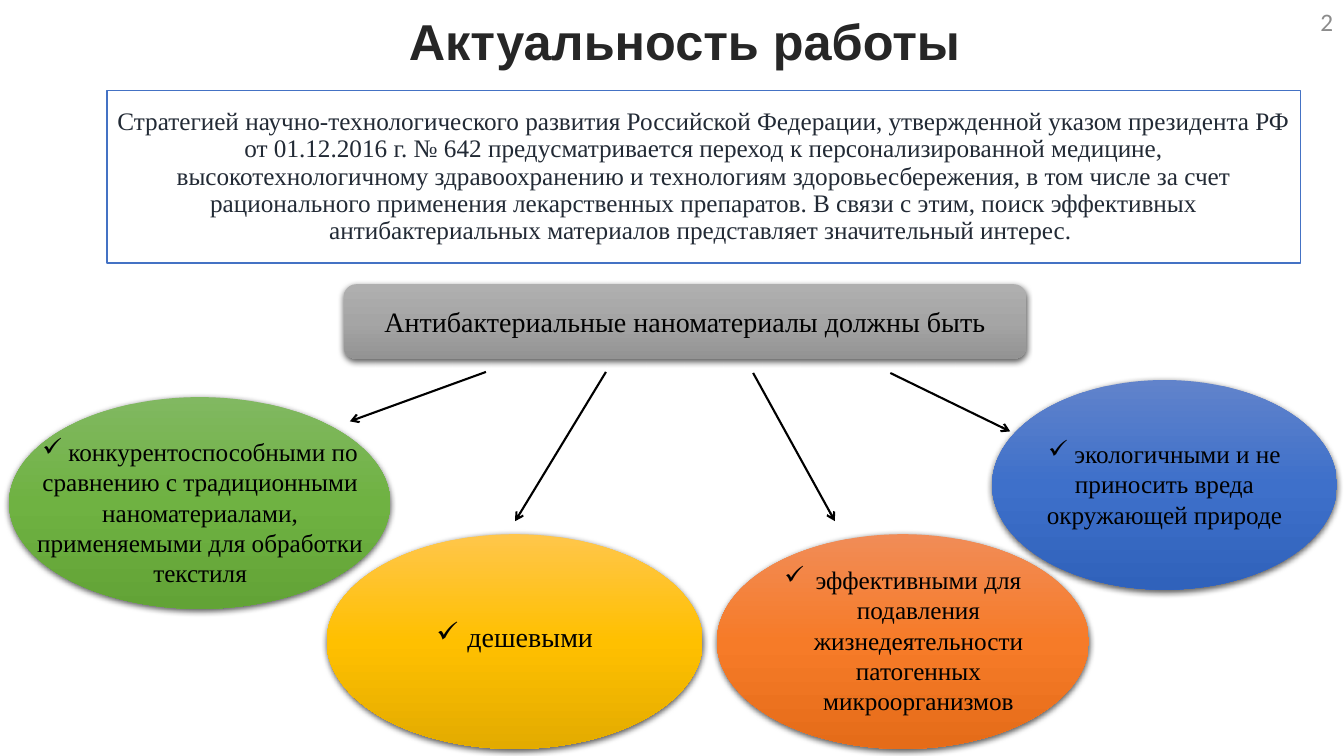
from copy import deepcopy
from dataclasses import dataclass

from lxml.etree import SubElement
from pptx import Presentation
from pptx.dml.color import RGBColor
from pptx.enum.shapes import MSO_CONNECTOR as Connector, MSO_SHAPE as Shape
from pptx.enum.text import MSO_ANCHOR as Anchor, MSO_AUTO_SIZE as AutoSize, PP_ALIGN as Align
from pptx.oxml.ns import qn
from pptx.util import Inches, Pt


@dataclass(frozen=True)
class Theme:
    heading_font: str = "Arial"
    number_font: str = "Calibri"
    body_font: str = "Times New Roman"
    heading_size: int = 36
    lead_size: int = 20
    body_size: int = 18
    heading: str = "262626"
    number: str = "8C8C8C"
    strategy: str = "222A35"
    ink: str = "000000"
    paper: str = "FFFFFF"
    frame: str = "4472C4"
    gray: tuple = ("AFAFAF", "A5A5A5", "939393")
    yellow: tuple = ("FFC64B", "FFC000", "E3AB00")
    green: tuple = ("81B861", "6FB242", "62A336")
    orange: tuple = ("F18C57", "F67B28", "E56C19")
    blue: tuple = ("6183CB", "3E70CA", "3062BB")


theme = Theme()

TITLE = "Актуальность работы"
PAGE = "2"
STRATEGY = (
    "Стратегией научно-технологического развития Российской Федерации, утвержденной "
    "указом президента РФ от 01.12.2016 г. № 642 предусматривается переход к "
    "персонализированной медицине, высокотехнологичному здравоохранению и технологиям "
    "здоровьесбережения, в том числе за счет рационального применения лекарственных "
    "препаратов. В связи с этим, поиск эффективных антибактериальных материалов "
    "представляет значительный интерес. "
)
LEAD = "Антибактериальные наноматериалы должны быть"

REQUIREMENTS = [
    dict(text="дешевыми", colors=theme.yellow, size=theme.lead_size, hanging=0.31,
         oval=(3.24, 5.3, 3.73, 2.13), label=(3.99, 6.1, 2.23, 0.44),
         arrow=(6.01, 3.69, 5.11, 5.17)),
    dict(text=" конкурентоспособными по сравнению с традиционными наноматериалами, "
              "применяемыми для обработки текстиля",
         colors=theme.green, size=theme.body_size, hanging=0,
         oval=(0.09, 3.94, 3.78, 2.1), label=(0.17, 4.28, 3.63, 1.62),
         arrow=(4.82, 3.69, 3.47, 4.18)),
    dict(text="эффективными для подавления жизнедеятельности патогенных микроорганизмов",
         colors=theme.orange, size=theme.body_size, hanging=0.31,
         oval=(7.11, 5.3, 3.69, 2.13), label=(7.47, 5.55, 2.97, 1.62),
         arrow=(7.47, 3.7, 8.28, 5.17)),
    dict(text=" экологичными и не приносить вреда окружающей природе",
         colors=theme.blue, size=theme.body_size, hanging=0,
         oval=(9.84, 3.77, 3.42, 2.08), label=(10.2, 4.3, 2.7, 1.31),
         arrow=(8.83, 3.7, 10.02, 4.28)),
]


def inches(values):
    return [Inches(value) for value in values]


def rgb(color):
    return RGBColor.from_string(color)


def write(box, text, size, color, font=theme.body_font, align=Align.CENTER,
          anchor=Anchor.MIDDLE, bold=False, spacing=None, hanging=None):
    frame = box.text_frame
    frame.word_wrap = True
    frame.auto_size = AutoSize.NONE if hanging is None else AutoSize.SHAPE_TO_FIT_TEXT
    frame.vertical_anchor = anchor
    paragraph = frame.paragraphs[0]
    paragraph.text = text
    paragraph.alignment = align
    if spacing:
        paragraph.line_spacing = spacing
    if hanging is not None:
        properties = paragraph._p.get_or_add_pPr()
        properties.set("marL", str(Inches(hanging)))
        properties.set("indent", str(-Inches(hanging)))
        SubElement(properties, qn("a:buChar"), char="✓")
    paragraph.font.name = font
    paragraph.font.size = Pt(size)
    paragraph.font.bold = bold
    paragraph.font.color.rgb = rgb(color)


def add_glossy(slide, kind, place, colors):
    shape = slide.shapes.add_shape(kind, *inches(place))
    shape.line.fill.background()
    shape.fill.gradient()
    shape.fill.gradient_angle = 270
    properties = shape._element.spPr
    stop_list = properties.find(".//" + qn("a:gsLst"))
    stop_list.insert(1, deepcopy(stop_list[0]))
    for stop, color, position in zip(shape.fill.gradient_stops, colors, (0, 0.5, 1)):
        stop.color.rgb = rgb(color)
        stop.position = position
    shape.shadow.inherit = False
    shadow = SubElement(properties.find(qn("a:effectLst")), qn("a:outerShdw"),
                        blurRad=str(Pt(4.5)), dist=str(Pt(1.5)), dir="5400000",
                        algn="ctr", rotWithShape="0")
    tint = SubElement(shadow, qn("a:srgbClr"), val=theme.ink)
    SubElement(tint, qn("a:alpha"), val="63000")
    return shape


def add_arrow(slide, ends):
    arrow = slide.shapes.add_connector(Connector.STRAIGHT, *inches(ends))
    arrow.line.color.rgb = rgb(theme.ink)
    arrow.line.width = Pt(1.5)
    SubElement(arrow.line._get_or_add_ln(), qn("a:tailEnd"), type="arrow")
    SubElement(arrow._element.spPr, qn("a:effectLst"))


def main():
    deck = Presentation()
    deck.slide_width, deck.slide_height = inches((13.33, 7.5))
    slide = deck.slides.add_slide(deck.slide_layouts[5])

    title = slide.shapes.title
    title.left, title.top, title.width, title.height = inches((2.89, 0.16, 7.8, 0.55))
    write(title, TITLE, theme.heading_size, theme.heading, theme.heading_font,
          bold=True, spacing=0.9)

    page = slide.shapes.add_textbox(*inches((10.32, 0.01, 3, 0.4)))
    write(page, PAGE, theme.body_size, theme.number, theme.number_font, Align.RIGHT)

    strategy = slide.shapes.add_shape(Shape.RECTANGLE, *inches((1.06, 0.9, 11.84, 1.71)))
    strategy.shadow.inherit = False
    strategy.fill.solid()
    strategy.fill.fore_color.rgb = rgb(theme.paper)
    strategy.line.color.rgb = rgb(theme.frame)
    strategy.line.width = Pt(1)
    write(strategy, STRATEGY, theme.body_size, theme.strategy, spacing=0.9)

    lead = add_glossy(slide, Shape.ROUNDED_RECTANGLE, (3.41, 2.82, 6.77, 0.74), theme.gray)
    write(lead, LEAD, theme.lead_size, theme.ink)

    for requirement in REQUIREMENTS:
        add_glossy(slide, Shape.OVAL, requirement["oval"], requirement["colors"])
        label = slide.shapes.add_textbox(*inches(requirement["label"]))
        write(label, requirement["text"], requirement["size"], theme.ink,
              anchor=Anchor.TOP, hanging=requirement["hanging"])
    for requirement in REQUIREMENTS:
        add_arrow(slide, requirement["arrow"])

    deck.save("out.pptx")


if __name__ == "__main__":
    main()
